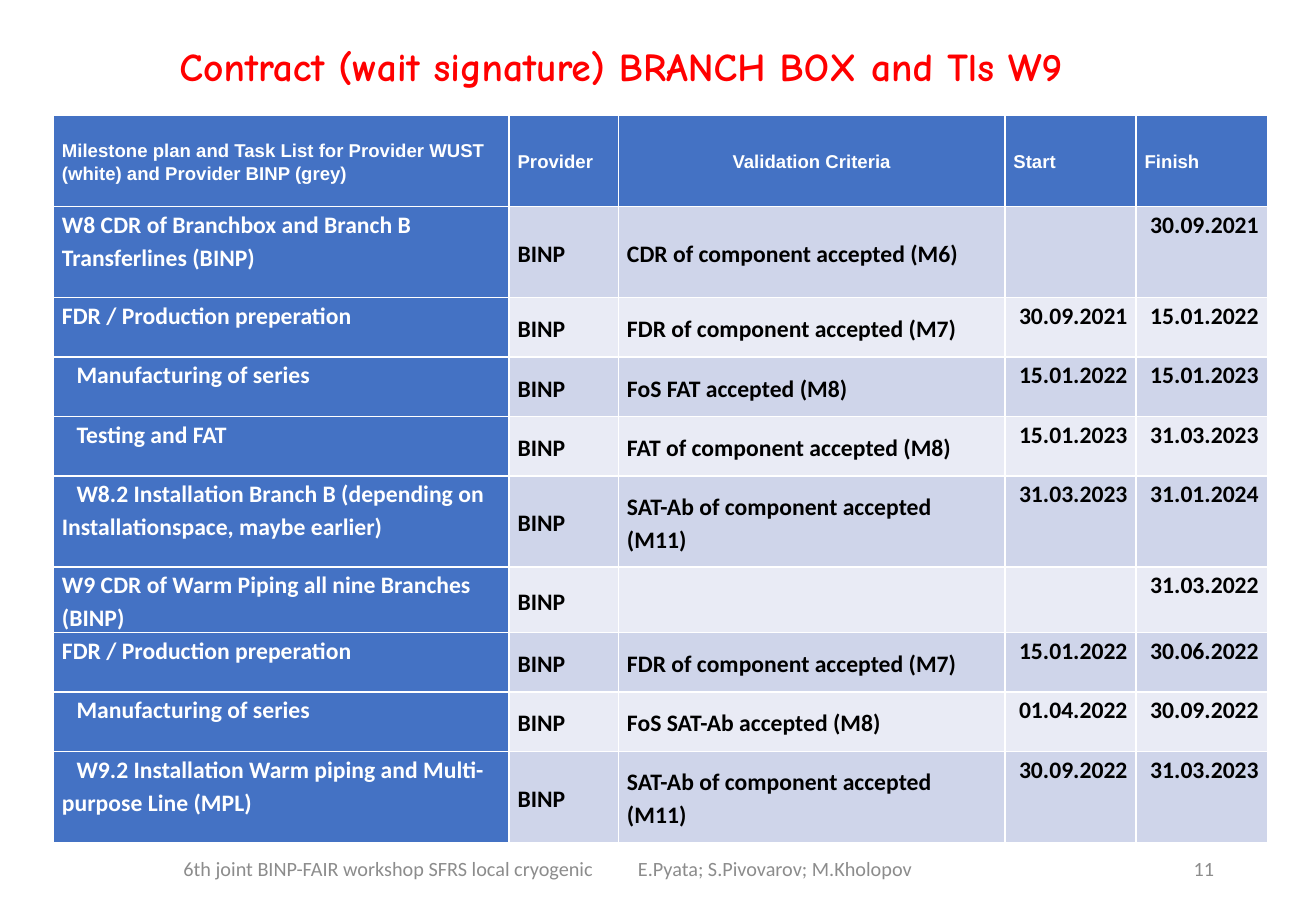
import pptx
import pptx.util
import pptx.dml.color
import pptx.enum.text
from lxml import etree

Inches, Pt = pptx.util.Inches, pptx.util.Pt
RGB = pptx.dml.color.RGBColor.from_string
ALIGN = pptx.enum.text.PP_ALIGN
ANCHOR = pptx.enum.text.MSO_ANCHOR

THEME = {
    "title": {"size": 23.4, "font": "Comic Neue", "color": "FF0000", "bold": True},
    "head": {"size": 11, "font": "Arial", "color": "FFFFFF", "bold": True, "spacing": 1.15},
    "task": {"size": 14, "font": "Calibri", "color": "FFFFFF", "bold": True, "spacing": 1.15},
    "body": {"size": 14, "font": "Calibri", "color": "000000", "bold": True, "spacing": 1.15},
    "footer": {"size": 12, "font": "Calibri", "color": "8C8C8C"},
    "blue": "4472C4",
    "bands": ["CFD5EA", "E9EBF5"],
}
W, H = 10.83, 7.5


def write(tf, text, size, font, color, bold=False, align=ALIGN.LEFT, spacing=1.0, indent=0):
    """Fill the first paragraph of tf and return it; indent is for its first line, in inches."""
    p = tf.paragraphs[0]
    p.alignment, p.line_spacing = align, spacing
    if indent:
        p._p.get_or_add_pPr().set("indent", str(Inches(indent)))
    r = p.add_run()
    r.text = text
    r.font.size, r.font.name, r.font.bold = Pt(size), font, bold
    r.font.color.rgb = RGB(color)
    return p


def add_box(left, top, width, height, anchor):
    tf = s.shapes.add_textbox(Inches(left), Inches(top), Inches(width), Inches(height)).text_frame
    tf.word_wrap, tf.vertical_anchor = True, anchor
    return tf


prs = pptx.Presentation()
prs.slide_width, prs.slide_height = Inches(W), Inches(H)
s = prs.slides.add_slide(prs.slide_layouts[6])

# Title
tf = add_box(0.56, 0.16, 0.84 * W, 0.62, ANCHOR.BOTTOM)
tf.margin_left = tf.margin_right = Inches(0.08)
tf.margin_top = tf.margin_bottom = Inches(0.04)
write(tf, "Contract (wait signature) BRANCH BOX and Tls W9",
      align=ALIGN.CENTER, spacing=0.9, **THEME["title"])

# Footer: event and authors on one tabbed line, then the page number
tf = add_box(0.56, 6.95, 7.9, 0.4, ANCHOR.MIDDLE)
tf.margin_left = Inches(0.95)
p = write(tf, "6th joint BINP-FAIR workshop SFRS local cryogenic\tE.Pyata; S.Pivovarov; M.Kholopov",
          **THEME["footer"])
ns = "{http://schemas.openxmlformats.org/drawingml/2006/main}"
tabs = etree.SubElement(p._p.get_or_add_pPr(), ns + "tabLst")
etree.SubElement(tabs, ns + "tab", pos=str(Inches(3.74)), algn="l")

tf = add_box(8.96, 6.95, 1.13, 0.4, ANCHOR.MIDDLE)
write(tf, "11", align=ALIGN.RIGHT, **THEME["footer"])

# Milestone table
SHORT, TALL = 0.49, 0.75
INDENT = 0.12
columns = [3.75, 0.9, 3.18, 1.08, 1.08]
header = ["Milestone plan and Task List for Provider WUST (white) and Provider BINP (grey)",
          "Provider", "Validation Criteria", "Start", "Finish"]
# row height, first-line indent, task, criteria, start, finish
milestones = [
    (TALL, 0, "W8 CDR of Branchbox and Branch B Transferlines (BINP)",
     "CDR of component accepted (M6)", "", "30.09.2021"),
    (SHORT, 0, "FDR / Production preperation",
     "FDR of component accepted (M7)", "30.09.2021", "15.01.2022"),
    (SHORT, INDENT, "Manufacturing of series",
     "FoS FAT accepted (M8)", "15.01.2022", "15.01.2023"),
    (SHORT, INDENT, "Testing and FAT",
     "FAT of component accepted (M8)", "15.01.2023", "31.03.2023"),
    (TALL, INDENT, "W8.2 Installation Branch B (depending on Installationspace, maybe earlier)",
     "SAT-Ab of component accepted (M11)", "31.03.2023", "31.01.2024"),
    (SHORT, 0, "W9 CDR of Warm Piping all nine Branches (BINP)",
     "", "", "31.03.2022"),
    (SHORT, 0, "FDR / Production preperation",
     "FDR of component accepted (M7)", "15.01.2022", "30.06.2022"),
    (SHORT, INDENT, "Manufacturing of series",
     "FoS SAT-Ab accepted (M8)", "01.04.2022", "30.09.2022"),
    (TALL, INDENT, "W9.2 Installation Warm piping and Multi-purpose Line (MPL)",
     "SAT-Ab of component accepted (M11)", "30.09.2022", "31.03.2023"),
]
heights = [TALL] + [m[0] for m in milestones]
table = s.shapes.add_table(len(heights), len(columns), Inches(0.44), Inches(0.95),
                           Inches(sum(columns)), Inches(sum(heights))).table
for column, width in zip(table.columns, columns):
    column.width = Inches(width)
for row, height in zip(table.rows, heights):
    row.height = Inches(height)

rows = [(0, header)] + [(m[1], [m[2], "BINP", *m[3:]]) for m in milestones]
for i, (indent, texts) in enumerate(rows):
    for j, text in enumerate(texts):
        cell = table.cell(i, j)
        cell.margin_left = cell.margin_right = Inches(0.07)
        cell.margin_top = cell.margin_bottom = 0
        is_head, is_task, is_date = i == 0, j == 0, j > 2
        cell.fill.solid()
        cell.fill.fore_color.rgb = RGB(
            THEME["blue"] if is_head or is_task else THEME["bands"][(i - 1) % 2])
        centred = is_head or j in (1, 2)
        cell.vertical_anchor = ANCHOR.MIDDLE if centred else ANCHOR.TOP
        if not text:
            continue
        align = ALIGN.LEFT
        if is_head and j == 2:
            align = ALIGN.CENTER
        elif is_date and not is_head:
            align = ALIGN.RIGHT
        style = "head" if is_head else "task" if is_task else "body"
        write(cell.text_frame, text, align=align, indent=indent if is_task else 0, **THEME[style])

prs.save("out.pptx")
